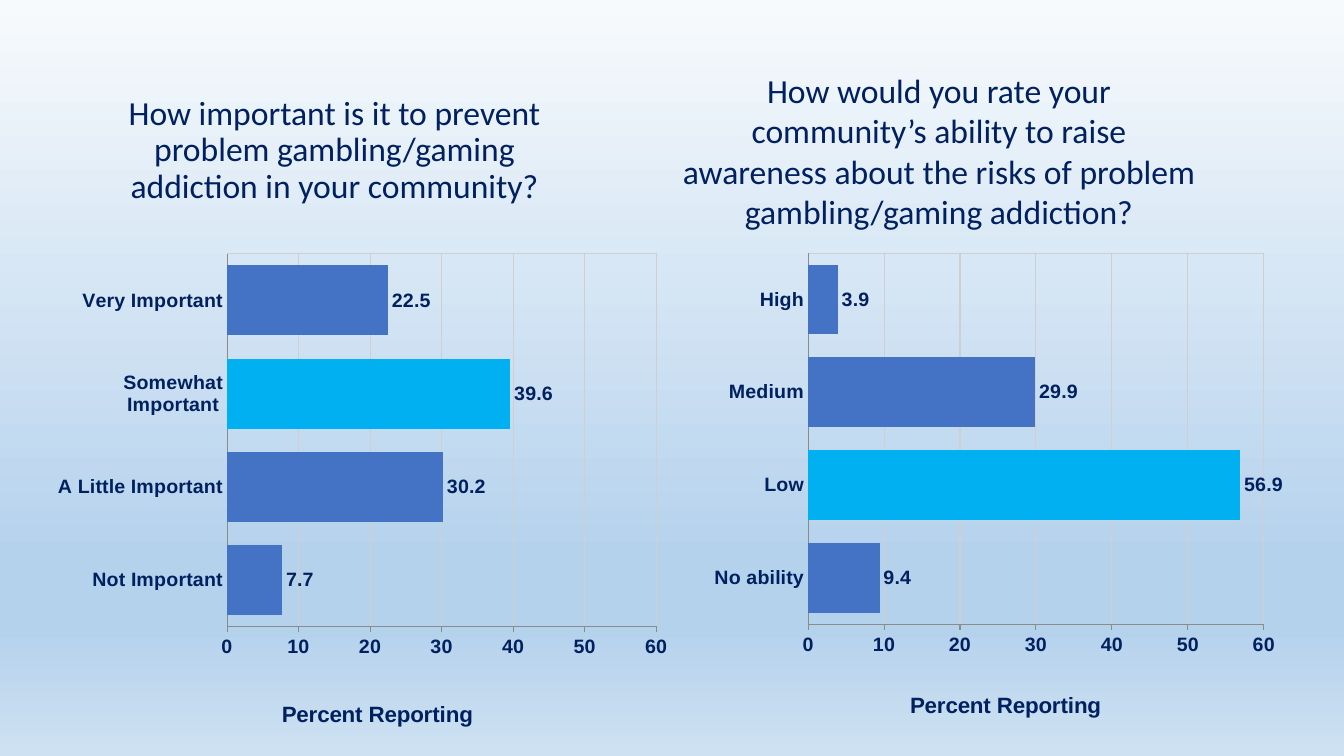
from lxml.etree import SubElement
from pptx import Presentation
from pptx.chart.data import CategoryChartData as ChartData
from pptx.dml.color import RGBColor
from pptx.enum.chart import XL_CHART_TYPE as Kind, XL_LABEL_POSITION as Spot
from pptx.enum.chart import XL_TICK_MARK as Tick
from pptx.enum.text import MSO_ANCHOR as Anchor, MSO_AUTO_SIZE as Fit, PP_ALIGN as Align
from pptx.oxml import parse_xml
from pptx.oxml.ns import nsdecls, qn
from pptx.util import Pt

HUES = {"ink": "002060", "bar": "4472C4", "peak": "00B0F0", "grid": "D0CECE",
        "axis": "8B8B8B", "black": "000000"}
STOPS = [(0, "F7FAFD"), (74, "B5D2EC"), (83, "B5D2EC"), (100, "CEE1F2")]
PANELS = [
    {"ask": "How important is it to prevent problem gambling/gaming addiction in your community?",
     "head": (111, 67, 447, 168), "lead": 0.9, "anchor": Anchor.MIDDLE,
     "box": (46, 210, 633, 523), "plot": (0.286, 0.085, 0.678, 0.721), "label": (0.366, 0.94),
     "data": {"Not Important": 7.7, "A Little Important": 30.2,
              "Somewhat Important": 39.6, "Very Important": 22.5}},
    {"ask": "How would you rate your community’s ability to raise awareness about the risks of "
            "problem gambling/gaming addiction?",
     "head": (669, 65, 540, 173), "lead": None, "anchor": Anchor.TOP,
     "box": (679, 210, 615, 514), "plot": (0.21, 0.085, 0.741, 0.733), "label": (0.369, 0.942),
     "data": {"No ability": 9.4, "Low": 56.9, "Medium": 29.9, "High": 3.9}},
]
SCALE = 914400 / 100.8


def px(*nums):
    return [round(n * SCALE) for n in nums]


def rgb(name):
    return RGBColor.from_string(HUES[name])


def style(font, size, face="Arial", bold=True, hue="ink"):
    font.size, font.name, font.bold = Pt(size), face, bold
    font.color.rgb = rgb(hue)


def write(frame, text, size=24, face="Calibri", bold=False, lead=None, anchor=Anchor.TOP):
    frame.word_wrap = True
    frame.auto_size = Fit.NONE
    frame.vertical_anchor = anchor
    para = frame.paragraphs[0]
    para.alignment = Align.CENTER
    para.line_spacing = lead
    run = para.add_run()
    run.text = text
    style(run.font, size, face, bold)


def stroke(line, hue):
    line.color.rgb = rgb(hue)
    line.width = Pt(0.75)


def place(node, index, nums, inner=False):
    for old in node.findall(qn("c:layout")):
        node.remove(old)
    rows = [("layoutTarget", "inner")] if inner else []
    rows += [("xMode", "edge"), ("yMode", "edge")] + list(zip("xywh", nums))
    body = "".join(f'<c:{tag} val="{val}"/>' for tag, val in rows)
    node.insert(index, parse_xml(
        f'<c:layout {nsdecls("c")}><c:manualLayout>{body}</c:manualLayout></c:layout>'))


def draw(slide, panel):
    data = ChartData()
    data.categories = list(panel["data"])
    vals = list(panel["data"].values())
    data.add_series("Series 1", vals)
    chart = slide.shapes.add_chart(Kind.BAR_CLUSTERED, *px(*panel["box"]), data).chart
    style(chart.font, 18, "Calibri", False, "black")
    chart.has_legend = chart.has_title = False

    cat, val = chart.category_axis, chart.value_axis
    for axis, tick in ((cat, Tick.NONE), (val, Tick.OUTSIDE)):
        axis.major_tick_mark, axis.minor_tick_mark = tick, Tick.NONE
        style(axis.tick_labels.font, 14)
        stroke(axis.format.line, "axis")
    cat.has_major_gridlines = False
    val.minimum_scale, val.maximum_scale, val.major_unit = 0, 60, 10
    val.tick_labels.number_format = "0"
    val.tick_labels.number_format_is_linked = False
    val.has_major_gridlines = True
    stroke(val.major_gridlines.format.line, "grid")
    write(val.axis_title.text_frame, "Percent Reporting", size=16, face="Arial", bold=True)

    bars = chart.plots[0]
    bars.gap_width, bars.overlap, bars.vary_by_categories = 33, 1, False
    series = bars.series[0]
    series.invert_if_negative = False
    for part, hue in ((series, "bar"), (series.points[vals.index(max(vals))], "peak")):
        part.format.fill.solid()
        part.format.fill.fore_color.rgb = rgb(hue)
    bars.has_data_labels = True
    tags = bars.data_labels
    tags.show_value, tags.position = True, Spot.OUTSIDE_END
    tags.number_format, tags.number_format_is_linked = "General", False
    style(tags.font, 14)

    area = chart.element.find(".//" + qn("c:plotArea"))
    place(area, 0, panel["plot"], True)
    place(area.find(qn("c:valAx")).find(qn("c:title")), 1, panel["label"])
    area.append(parse_xml(
        f'<c:spPr {nsdecls("c", "a")}><a:noFill/><a:ln w="9525"><a:solidFill>'
        f'<a:srgbClr val="{HUES["grid"]}"/></a:solidFill></a:ln></c:spPr>'))


def shade(slide):
    fill = slide.background.fill
    fill.gradient()
    fill.gradient_angle = 270
    stops = slide.element.find(".//" + qn("a:gsLst"))
    for old in list(stops):
        stops.remove(old)
    for spot, hue in STOPS:
        stop = SubElement(stops, qn("a:gs"), pos=str(spot * 1000))
        SubElement(stop, qn("a:srgbClr"), val=hue)


def main():
    deck = Presentation()
    deck.slide_width, deck.slide_height = px(1344, 756)
    slide = deck.slides.add_slide(deck.slide_layouts[5])
    shade(slide)
    title = slide.shapes.title
    for panel in PANELS:
        spot = px(*panel["head"])
        head = title if panel is PANELS[0] else slide.shapes.add_textbox(*spot)
        head.left, head.top, head.width, head.height = spot
        write(head.text_frame, panel["ask"], lead=panel["lead"], anchor=panel["anchor"])
        draw(slide, panel)
    deck.save("out.pptx")


if __name__ == "__main__":
    main()
